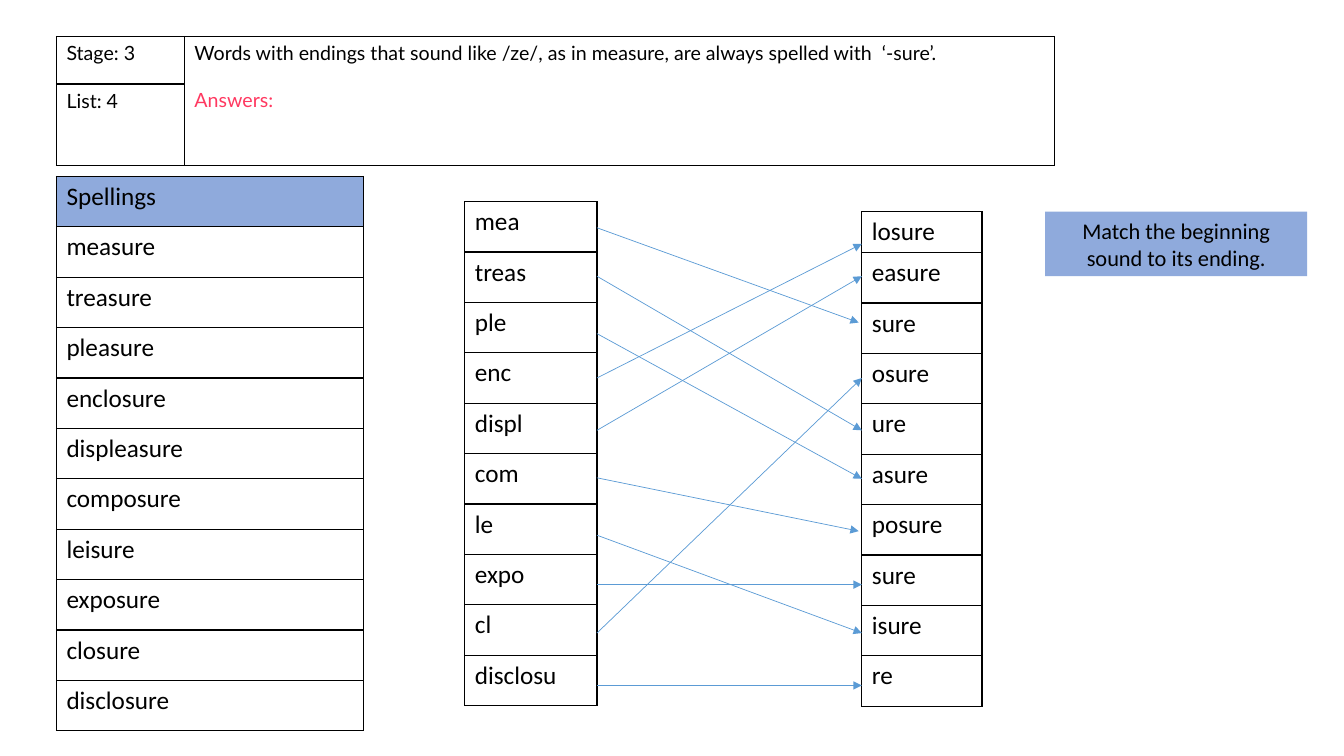
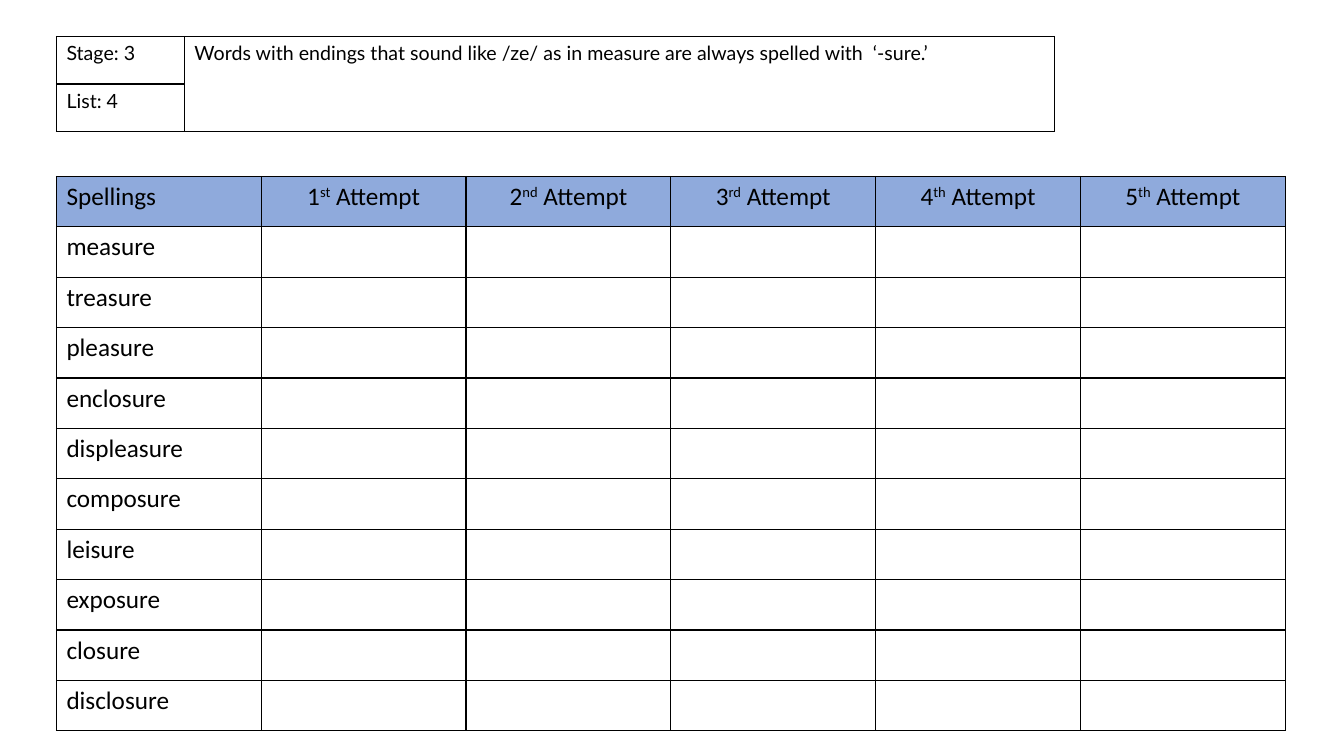
from lxml import etree
from pptx import Presentation
from pptx.dml.color import RGBColor
from pptx.enum.shapes import MSO_CONNECTOR, MSO_SHAPE
from pptx.enum.text import MSO_ANCHOR, PP_ALIGN
from pptx.oxml.ns import qn
from pptx.util import Pt

STRAIGHT = MSO_CONNECTOR.STRAIGHT
RECTANGLE = MSO_SHAPE.RECTANGLE
MIDDLE = MSO_ANCHOR.MIDDLE
LEFT, CENTER = PP_ALIGN.LEFT, PP_ALIGN.CENTER

BLACK, BLUE, ARROW, PINK = "000000", "8FAADC", "5B9BD5", "FF3860"
HEADER_FONT = {"name": "Lato", "size": Pt(14)}
WORD_FONT = {"name": "Calibri", "size": Pt(18)}
TASK_FONT = {"name": "Calibri", "size": Pt(16)}

MARGIN, HEADER_TOP, WORDS_TOP = 40.3, 26, 126
ROW = 36
BEGIN_LEFT, BEGIN_TOP, BEGIN_WIDTH = 332, 144, 94.4
END_LEFT, END_TOP, END_WIDTH = 615.6, 151.2, 85.8

WORDS = ["measure", "treasure", "pleasure", "enclosure", "displeasure",
         "composure", "leisure", "exposure", "closure", "disclosure"]
BEGINNINGS = ["mea", "treas", "ple", "enc", "displ",
              "com", "le", "expo", "cl", "disclosu"]
ENDINGS = ["losure", "easure", "sure", "osure", "ure",
           "asure", "posure", "sure", "isure", "re"]
ORDINALS = [("1", "st"), ("2", "nd"), ("3", "rd"), ("4", "th"), ("5", "th")]
MATCHES = [(162.7, 613.4, 230.4), (197.3, END_LEFT, 307.4),
           (238.3, END_LEFT, 342), (270, END_LEFT, 174.2),
           (307.4, END_LEFT, 197.3), (341.3, 613.4, 379.4),
           (382.3, END_LEFT, 452.2), (417.6, END_LEFT, 417.6),
           (452.2, END_LEFT, 270), (489.6, END_LEFT, 489.6)]


def rgb(color):
    return RGBColor.from_string(color)


def style(font, fmt, color=BLACK):
    for key, value in fmt.items():
        setattr(font, key, value)
    font.color.rgb = rgb(color)


def add_run(p, text, fmt, color=BLACK, raised=False):
    r = p.add_run()
    r.text = text
    style(r.font, fmt, color)
    if raised:
        r._r.get_or_add_rPr().set("baseline", "30000")


def add_borders(cell):
    tcPr = cell._tc.get_or_add_tcPr()
    for i, side in enumerate(("lnL", "lnR", "lnT", "lnB")):
        ln = etree.Element(qn(f"a:{side}"), w=str(Pt(1)))
        fill = etree.SubElement(ln, qn("a:solidFill"))
        etree.SubElement(fill, qn("a:srgbClr"), val=BLACK)
        tcPr.insert(i, ln)


def add_grid(s, left, top, widths, heights, rows, fmt):
    table = s.shapes.add_table(len(heights), len(widths), Pt(left), Pt(top),
                               Pt(sum(widths)), Pt(sum(heights))).table
    table.first_row = table.horz_banding = False
    for column, width in zip(table.columns, widths):
        column.width = Pt(width)
    for row, height, texts in zip(table.rows, heights, rows):
        row.height = Pt(height)
        for cell, text in zip(row.cells, texts):
            cell.fill.background()
            add_borders(cell)
            p = cell.text_frame.paragraphs[0]
            if text:
                add_run(p, text, fmt)
            else:
                style(p.font, fmt)
    return table


def add_header(s, rule, list_height=34):
    table = add_grid(s, MARGIN, HEADER_TOP, [91.4, 621.4], [34, list_height],
                     [["Stage: 3", rule], ["List: 4", ""]], HEADER_FONT)
    cell = table.cell(0, 1)
    cell.merge(table.cell(1, 1))
    return cell


def add_spellings(s, widths):
    blanks = [""] * (len(widths) - 1)
    rows = [[word] + blanks for word in ["Spellings"] + WORDS]
    table = add_grid(s, MARGIN, WORDS_TOP, widths, [ROW] * len(rows), rows, WORD_FONT)
    for cell in table.rows[0].cells:
        cell.fill.solid()
        cell.fill.fore_color.rgb = rgb(BLUE)
    return table


def add_column(s, left, top, width, heights, words):
    add_grid(s, left, top, [width], heights, [[word] for word in words], WORD_FONT)


def add_task(s, text):
    sp = s.shapes.add_shape(RECTANGLE, Pt(746.6), Pt(END_TOP), Pt(187.2), Pt(46))
    sp.shadow.inherit = False
    sp.fill.solid()
    sp.fill.fore_color.rgb = rgb(BLUE)
    sp.line.fill.background()
    tf = sp.text_frame
    tf.word_wrap = True
    tf.vertical_anchor = MIDDLE
    p = tf.paragraphs[0]
    p.alignment = CENTER
    add_run(p, text, TASK_FONT)


def add_arrow(s, x1, y1, x2, y2):
    line = s.shapes.add_connector(STRAIGHT, Pt(x1), Pt(y1), Pt(x2), Pt(y2))
    line.line.width = Pt(0.5)
    line.line.color.rgb = rgb(ARROW)
    etree.SubElement(line.line._get_or_add_ln(), qn("a:tailEnd"), type="triangle")
    etree.SubElement(line._element.spPr, qn("a:effectLst"))


def build_answers(s):
    add_spellings(s, [219.6])
    cell = add_header(s, "Words with endings that sound like /ze/, as in measure, "
                         "are always spelled with  ‘-sure’.", 58)
    p = cell.text_frame.add_paragraph()
    p.alignment = LEFT
    p.space_before = Pt(16.8)
    add_run(p, "Answers:", HEADER_FONT, PINK)
    add_column(s, BEGIN_LEFT, BEGIN_TOP, BEGIN_WIDTH, [ROW] * 10, BEGINNINGS)
    add_column(s, END_LEFT, END_TOP, END_WIDTH, [29.2] + [ROW] * 9, ENDINGS)
    add_task(s, "Match the beginning sound to its ending.")
    for y1, x2, y2 in MATCHES:
        add_arrow(s, BEGIN_LEFT + BEGIN_WIDTH, y1, x2, y2)


def build_attempts(s):
    table = add_spellings(s, [146.3] * 6)
    for col, (number, suffix) in enumerate(ORDINALS, 1):
        p = table.cell(0, col).text_frame.paragraphs[0]
        p.alignment = CENTER
        add_run(p, number, WORD_FONT)
        add_run(p, suffix, WORD_FONT, raised=True)
        add_run(p, " Attempt", WORD_FONT)
    add_header(s, "Words with endings that sound like /ze/ as in measure "
                  "are always spelled with  ‘-sure.’")


def main():
    prs = Presentation()
    prs.slide_width, prs.slide_height = Pt(960), Pt(540)
    for build in (build_answers, build_attempts):
        build(prs.slides.add_slide(prs.slide_layouts[6]))
    prs.save("out.pptx")


if __name__ == "__main__":
    main()
